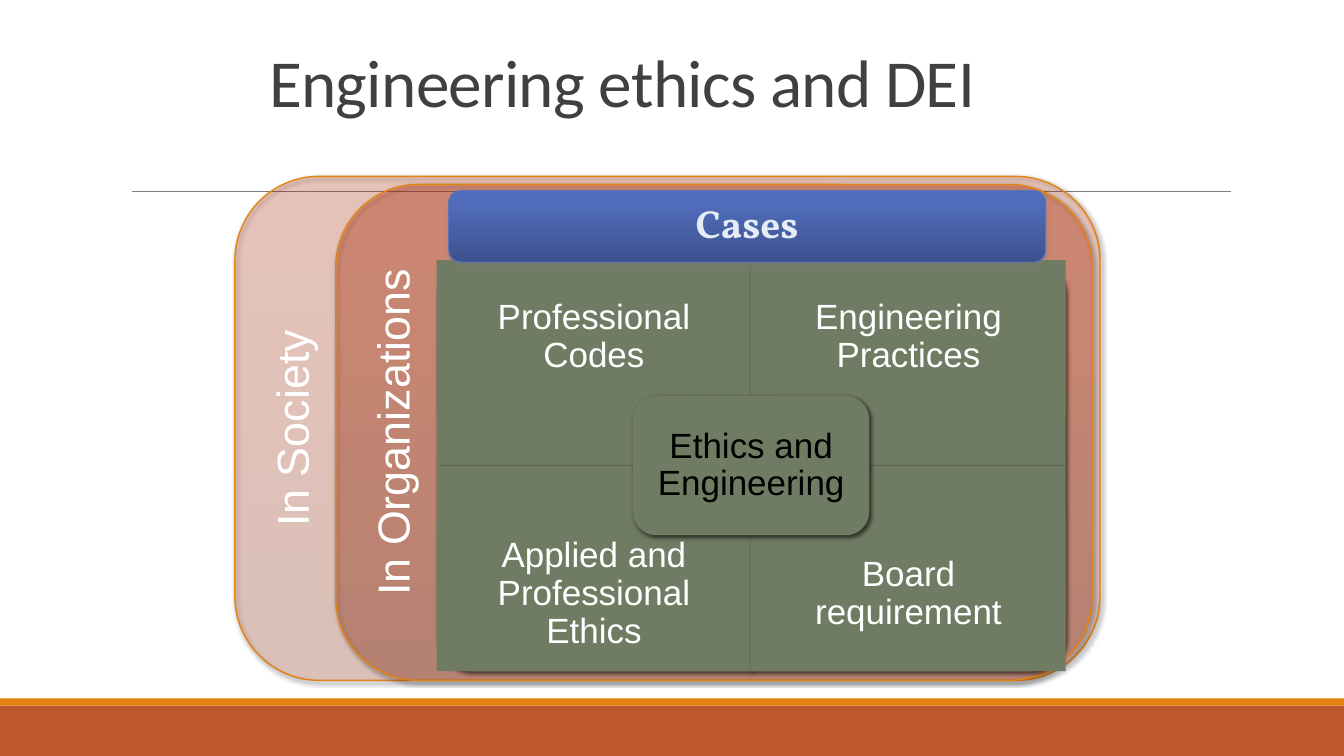
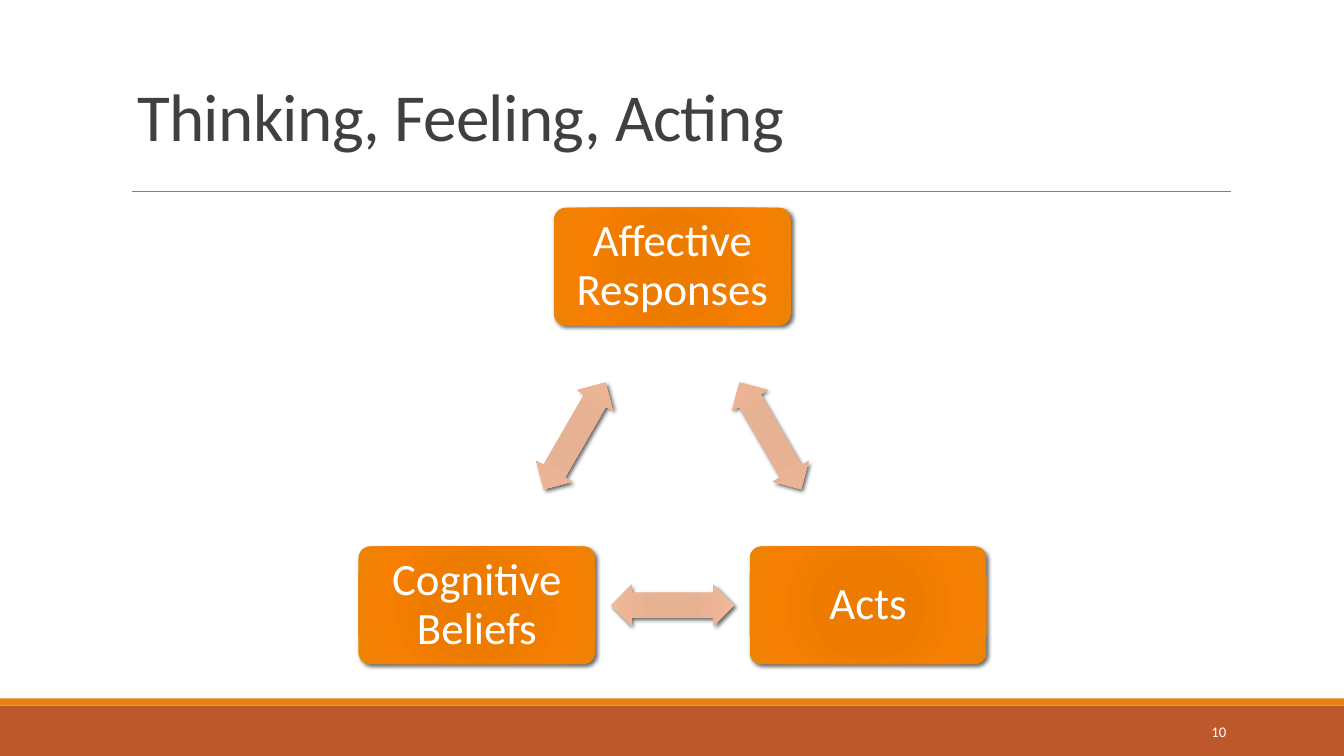
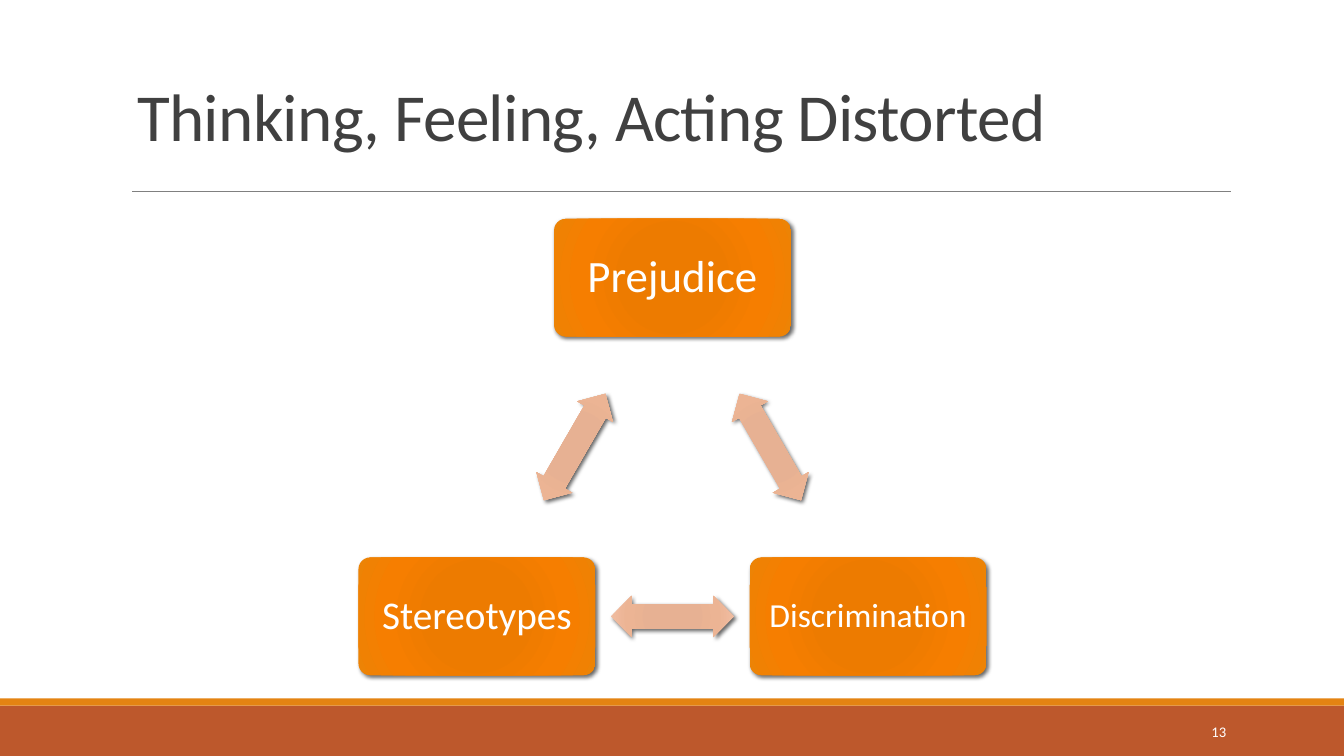
from math import cos, radians, sin

from lxml.etree import SubElement
from pptx import Presentation
from pptx.dml.color import RGBColor
from pptx.enum.shapes import MSO_CONNECTOR, MSO_SHAPE as SHAPE
from pptx.enum.text import MSO_ANCHOR as ANCHOR, PP_ALIGN as ALIGN
from pptx.oxml.ns import qn
from pptx.util import Inches, Pt

# Shared colours and formats
RUST, ORANGE, RULE_GRAY = "BD582C", "E48312", "808080"
TITLE_GRAY, WHITE, BLACK, SAGE = "404040", "FFFFFF", "000000", "6F7B63"
NODE_STOPS = [(0, "EF7B00"), (34, "ED7B00"), (70, "F67E00"), (100, "ED8305")]
ARROW_STOPS = [(0, "E6AF91"), (34, "E7B193"), (70, "ECB494"), (100, "F1BEA3")]
PANEL_STOPS = [(0, "AF2B00"), (80, "E73700"), (100, "ED3600")]
CASES_STOPS = [(0, "4F6CBD"), (20, "506CBA"), (100, "3C518E")]
SOFT_SHADOW = (BLACK, 60, 3, 2, 45)
CASES_SHADOW = (RULE_GRAY, 35, 3.1, 1.8, 90)


def rgb(color):
    return RGBColor.from_string(color)


def add_color(parent, color, alpha=100):
    element = SubElement(parent, qn("a:srgbClr"), val=color)
    if alpha < 100:
        SubElement(element, qn("a:alpha"), val=str(alpha * 1000))


def set_gradient(shape, stops, angle=None, alpha=100):
    """Linear gradient at a clockwise angle, or circular without one."""
    shape.fill.gradient()
    gradient = shape._element.spPr.find(qn("a:gradFill"))
    for child in list(gradient):
        gradient.remove(child)
    stop_list = SubElement(gradient, qn("a:gsLst"))
    for position, color in stops:
        stop = SubElement(stop_list, qn("a:gs"), pos=str(position * 1000))
        add_color(stop, color, alpha)
    if angle is None:
        circle = SubElement(gradient, qn("a:path"), path="circle")
        SubElement(circle, qn("a:fillToRect"), l="50000", t="50000", r="50000", b="50000")
    else:
        SubElement(gradient, qn("a:lin"), ang=str(angle * 60000), scaled="0")


def set_shadow(shape, color, alpha, blur, distance, angle):
    effects = shape._element.spPr.find(qn("a:effectLst"))
    shadow = SubElement(effects, qn("a:outerShdw"), blurRad=str(Pt(blur)), dist=str(Pt(distance)),
                        dir=str(angle * 60000), algn="ctr", rotWithShape="0")
    add_color(shadow, color, alpha)


def add_box(slide, kind, box, fill=None, line=None, line_width=1, shadow=None, adjust=(), rotation=0):
    shape = slide.shapes.add_shape(kind, *(Inches(length) for length in box))
    shape.rotation = rotation
    for index, value in enumerate(adjust):
        shape.adjustments[index] = value
    if fill:
        shape.fill.solid()
        shape.fill.fore_color.rgb = rgb(fill)
    if line:
        shape.line.color.rgb = rgb(line)
        shape.line.width = Pt(line_width)
    else:
        shape.line.fill.background()
    shape.shadow.inherit = False
    if shadow:
        set_shadow(shape, *shadow)
    return shape


def write(shape, text, size, color=WHITE, font="Calibri", bold=False, align=ALIGN.CENTER,
          anchor=ANCHOR.MIDDLE, spacing=None, margin=None):
    frame = shape.text_frame
    frame.word_wrap = True
    frame.vertical_anchor = anchor
    if margin is not None:
        for side in ("left", "top", "right", "bottom"):
            setattr(frame, f"margin_{side}", Inches(margin))
    paragraph = frame.paragraphs[0]
    paragraph.alignment = align
    paragraph.line_spacing = spacing
    run = paragraph.add_run()
    run.text = text
    for name, value in {"size": Pt(size), "name": font, "bold": bold}.items():
        setattr(run.font, name, value)
    run.font.color.rgb = rgb(color)
    return run


def add_text(slide, box, text, size, rotation=0, **style):
    shape = slide.shapes.add_textbox(*(Inches(length) for length in box))
    shape.rotation = rotation
    write(shape, text, size, **style)


# Shared frame: footer bands and title rule live on the layout
def build_frame(slide):
    bottom_band = add_box(slide, SHAPE.RECTANGLE, (0, 7, 13.33, 0.5), RUST)
    accent_band = add_box(slide, SHAPE.RECTANGLE, (0, 6.93, 13.33, 0.07), ORANGE)
    rule = slide.shapes.add_connector(MSO_CONNECTOR.STRAIGHT, Inches(1.31), Inches(1.9),
                                      Inches(12.21), Inches(1.9))
    rule.line.color.rgb = rgb(RULE_GRAY)
    rule.line.width = Pt(0.5)
    SubElement(rule._element.spPr, qn("a:effectLst"))
    for part in (bottom_band, accent_band, rule):
        slide.slide_layout.shapes._spTree.append(part._element)


def add_titled_slide(presentation, title, box=(1.26, 0, 11, 1.59), number=None):
    slide = presentation.slides.add_slide(presentation.slide_layouts[5])
    placeholder = slide.shapes.title
    for name, length in zip(("left", "top", "width", "height"), box):
        setattr(placeholder, name, Inches(length))
    run = write(placeholder, title, 48, TITLE_GRAY, align=ALIGN.LEFT, anchor=ANCHOR.BOTTOM, spacing=0.85)
    run.font._element.set("spc", "-50")
    if number:
        add_text(slide, (10.83, 7.06, 1.43, 0.4), number, 10.5, align=ALIGN.RIGHT)
    return slide


# Nested context panel with its label reading upwards along the left side
def add_panel(slide, box, label, alpha):
    panel = add_box(slide, SHAPE.ROUNDED_RECTANGLE, box, line=ORANGE, shadow=SOFT_SHADOW, adjust=[0.167])
    set_gradient(panel, PANEL_STOPS, 270, alpha)
    left, top, width, height = box
    inset = 0.24
    label_width, label_height = height - 2 * inset, width - 2 * inset
    label_box = (left + (width - label_width) / 2, top + (height - label_height) / 2,
                 label_width, label_height)
    add_text(slide, label_box, label, 32, rotation=270, font="Arial", anchor=ANCHOR.TOP)


# Four tiles around a central topic
def add_matrix(slide, box, labels, center_label):
    left, top, width, height = box
    tile_width, tile_height = width / 2, height / 2
    label_height = tile_height * 0.75
    style = {"font": "Arial", "spacing": 0.9}
    for index, (label, rotation) in enumerate(zip(labels, (270, 0, 180, 90))):
        row, column = divmod(index, 2)
        x, y = left + column * tile_width, top + row * tile_height
        tile_box = (x, y, tile_width, tile_height)
        if rotation in (90, 270):
            shift = (tile_width - tile_height) / 2
            tile_box = (x + shift, y - shift, tile_height, tile_width)
        add_box(slide, SHAPE.ROUND_1_RECTANGLE, tile_box, SAGE, shadow=SOFT_SHADOW,
                adjust=[0.167], rotation=rotation)
        label_top = y + row * (tile_height - label_height)
        face = add_box(slide, SHAPE.RECTANGLE, (x, label_top, tile_width, label_height), SAGE)
        write(face, label, 25, margin=0.19, **style)

    hub_width, hub_height = 2.34, 1.38
    hub_box = (left + (width - hub_width) / 2, top + (height - hub_height) / 2, hub_width, hub_height)
    hub = add_box(slide, SHAPE.ROUNDED_RECTANGLE, hub_box, SAGE, shadow=SOFT_SHADOW, adjust=[0.167])
    write(hub, center_label, 25, BLACK, margin=0.1, **style)


def add_cases_bar(slide, box):
    bar = add_box(slide, SHAPE.ROUNDED_RECTANGLE, box, line="5C72B2", line_width=0.75,
                  shadow=CASES_SHADOW, adjust=[0.167])
    set_gradient(bar, CASES_STOPS, 90)
    write(bar, "Cases", 28, "E6ECF4", "Vollkorn", bold=True, anchor=ANCHOR.TOP)


# Three nodes on a circle, clockwise from the top, with an arrow between each pair
def add_cycle(slide, box, nodes):
    left, top, width, height = box
    node_width, node_height = 2.35, 1.17
    arrow_width, arrow_height = 1.22, 0.41
    radius = (height - node_height) / 1.5
    center_x, center_y = left + width / 2, top + node_height / 2 + radius

    def around(angle, distance, item_width, item_height):
        return (center_x + distance * cos(radians(angle)) - item_width / 2,
                center_y + distance * sin(radians(angle)) - item_height / 2,
                item_width, item_height)

    for index, (label, size) in enumerate(nodes):
        angle = 120 * index - 90
        node = add_box(slide, SHAPE.ROUNDED_RECTANGLE, around(angle, radius, node_width, node_height),
                       shadow=SOFT_SHADOW, adjust=[0.1])
        set_gradient(node, NODE_STOPS)
        write(node, label, size, spacing=0.9, margin=0.07)
        arrow_box = around(angle + 60, radius / 2, arrow_width, arrow_height)
        arrow = add_box(slide, SHAPE.LEFT_RIGHT_ARROW, arrow_box, shadow=SOFT_SHADOW,
                        adjust=[0.6, 0.5], rotation=60 + 120 * index)
        set_gradient(arrow, ARROW_STOPS)


def main():
    presentation = Presentation()
    presentation.slide_width, presentation.slide_height = Inches(13.33), Inches(7.5)

    slide = add_titled_slide(presentation, "Engineering ethics and DEI", (2.57, 0.31, 8.25, 0.94))
    build_frame(slide)
    add_panel(slide, (2.33, 1.75, 8.58, 5), "In Society", 18)
    add_panel(slide, (3.33, 1.83, 7.5, 4.92), "In Organizations", 26)
    add_matrix(slide, (4.33, 2.58, 6.24, 4.08),
               ["Professional Codes", "Engineering Practices",
                "Applied and Professional Ethics", "Board requirement"],
               "Ethics and Engineering")
    add_cases_bar(slide, (4.45, 1.89, 5.92, 0.71))

    cycles = [
        ("Thinking, Feeling, Acting", "10", 2.06,
         [("Affective Responses", 32), ("Acts", 32), ("Cognitive Beliefs", 32)]),
        ("Thinking, Feeling, Acting Distorted", "13", 2.17,
         [("Prejudice", 32), ("Discrimination", 24), ("Stereotypes", 28)]),
    ]
    for title, number, top, nodes in cycles:
        slide = add_titled_slide(presentation, title, number=number)
        add_cycle(slide, (3.56, top, 6.22, 4.53), nodes)

    presentation.save("out.pptx")


if __name__ == "__main__":
    main()
